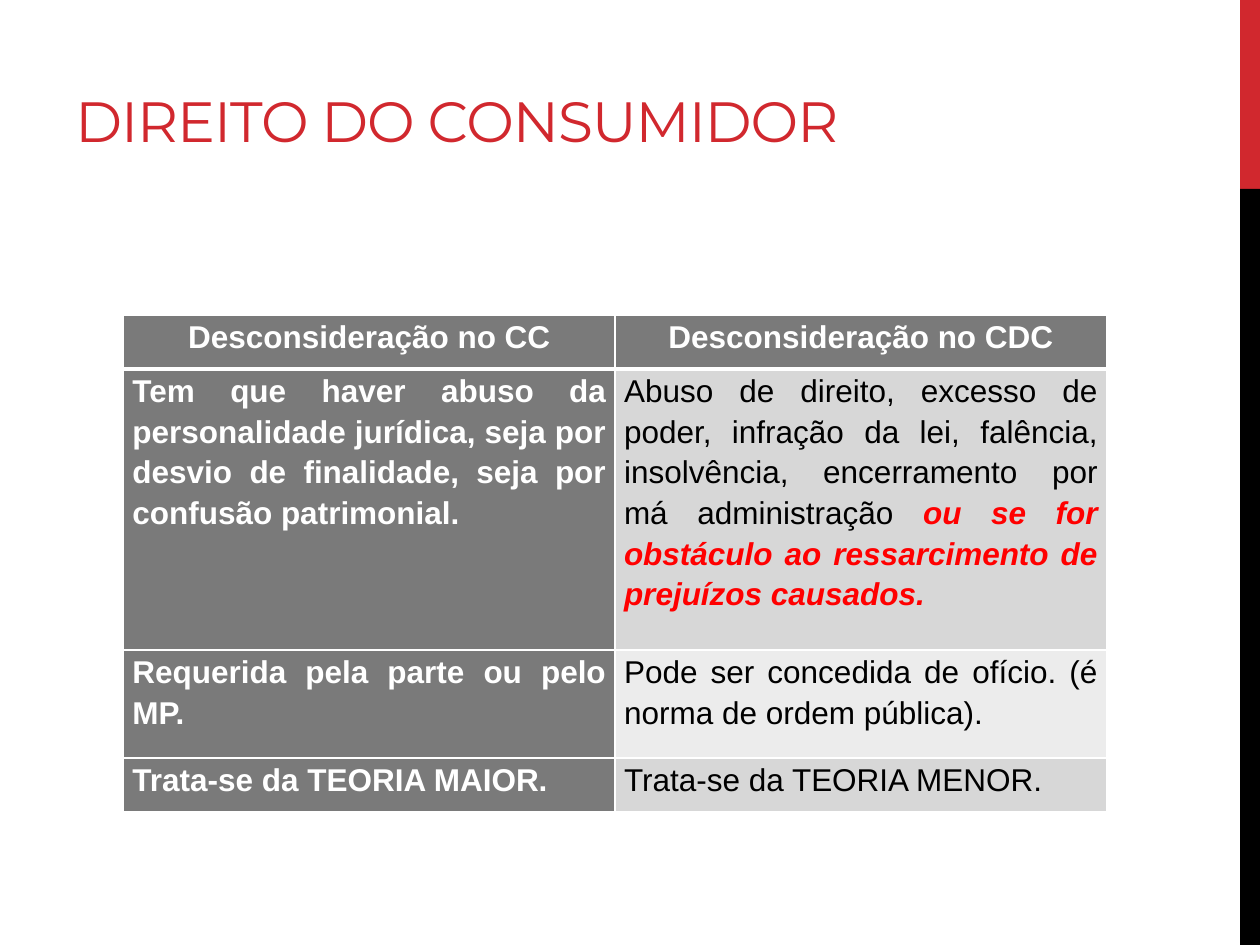
"""Build a slide comparing two regimes of piercing the corporate veil."""
from dataclasses import dataclass

from lxml import etree
from pptx import Presentation
from pptx.dml.color import RGBColor
from pptx.enum.shapes import MSO_SHAPE
from pptx.enum.text import MSO_ANCHOR, PP_ALIGN
from pptx.oxml.ns import qn
from pptx.slide import Slide
from pptx.table import _Cell
from pptx.text.text import _Paragraph
from pptx.util import Cm, Pt

RECTANGLE = MSO_SHAPE.RECTANGLE
BOTTOM = MSO_ANCHOR.BOTTOM
CENTER = PP_ALIGN.CENTER
JUSTIFY = PP_ALIGN.JUSTIFY

RED, BLACK, WHITE = "D1282E", "000000", "FFFFFF"
DARK, MEDIUM, LIGHT = "7A7A7A", "D7D7D7", "ECECEC"
HIGHLIGHT = "FF0000"

SLIDE_WIDTH, SLIDE_HEIGHT = 25.4, 19.05
BAR_LEFT, BAR_SPLIT = 25.0, 3.81
COLUMN_WIDTH = 9.91
ROW_HEIGHTS = (1.09, 5.66, 2.18, 1.09)
THIN, THICK = 1, 3


@dataclass(frozen=True)
class Span:
    """A stretch of text in one style."""

    text: str
    color: str = WHITE
    bold: bool = True
    italic: bool = False
    size: float = 18
    font: str = "Arial"


@dataclass(frozen=True)
class Entry:
    """The content of one table cell."""

    fill: str
    spans: tuple[Span, ...]


def heading(text: str) -> Entry:
    """Return a dark cell with bold white text."""
    return Entry(DARK, (Span(text),))


def body(fill: str, text: str, *extra: Span) -> Entry:
    """Return a pale cell that starts with plain black text."""
    return Entry(fill, (Span(text, BLACK, bold=False), *extra))


ROWS = (
    (heading("Desconsideração no CC"), heading("Desconsideração no CDC")),
    (
        heading(
            "Tem que haver abuso da personalidade jurídica, seja por desvio "
            "de finalidade, seja por confusão patrimonial."
        ),
        body(
            MEDIUM,
            "Abuso de direito, excesso de poder, infração da lei, falência, "
            "insolvência, encerramento por má administração ",
            Span(
                "ou se for obstáculo ao ressarcimento de prejuízos causados.",
                HIGHLIGHT,
                italic=True,
            ),
        ),
    ),
    (
        heading("Requerida pela parte ou pelo MP."),
        body(LIGHT, "Pode ser concedida de ofício. (é norma de ordem pública)."),
    ),
    (
        heading("Trata-se da TEORIA MAIOR."),
        body(MEDIUM, "Trata-se da TEORIA MENOR."),
    ),
)


def rgb(color: str) -> RGBColor:
    """Convert a hex string to a colour."""
    return RGBColor.from_string(color)


def add_span(paragraph: _Paragraph, span: Span, spacing: int = 0) -> None:
    """Append a styled run, with letter spacing in hundredths of a point."""
    run = paragraph.add_run()
    run.text = span.text
    run.font.name = span.font
    run.font.size = Pt(span.size)
    run.font.bold = span.bold
    run.font.italic = span.italic
    run.font.color.rgb = rgb(span.color)
    if spacing:
        run.font._element.set("spc", str(spacing))


def add_bar(slide: Slide, top: float, height: float, color: str) -> None:
    """Draw one part of the bar on the right edge."""
    bar = slide.shapes.add_shape(
        RECTANGLE, Cm(BAR_LEFT), Cm(top), Cm(SLIDE_WIDTH - BAR_LEFT), Cm(height)
    )
    bar.shadow.inherit = False
    bar.fill.solid()
    bar.fill.fore_color.rgb = rgb(color)
    bar.line.fill.background()


def add_title(slide: Slide, text: str) -> None:
    """Write the slide heading."""
    frame = slide.shapes.add_textbox(
        Cm(1.27), Cm(1.52), Cm(22.43), Cm(1.7)
    ).text_frame
    frame.word_wrap = True
    frame.vertical_anchor = BOTTOM
    title = Span(text, RED, bold=False, size=32.4, font="Montserrat")
    add_span(frame.paragraphs[0], title, spacing=-60)


def set_borders(cell: _Cell, top: float, bottom: float) -> None:
    """Give a cell white borders, with widths in points."""
    properties = cell._tc.get_or_add_tcPr()
    widths = {"a:lnL": THIN, "a:lnR": THIN, "a:lnT": top, "a:lnB": bottom}
    for position, (tag, width) in enumerate(widths.items()):
        line = etree.Element(qn(tag), w=str(Pt(width)))
        fill = etree.SubElement(line, qn("a:solidFill"))
        etree.SubElement(fill, qn("a:srgbClr"), val=WHITE)
        properties.insert(position, line)


def fill_cell(cell: _Cell, entry: Entry, row: int) -> None:
    """Write and style one cell."""
    cell.fill.solid()
    cell.fill.fore_color.rgb = rgb(entry.fill)
    cell.margin_left = cell.margin_right = Cm(0.18)
    cell.margin_top = cell.margin_bottom = Cm(0)
    paragraph = cell.text_frame.paragraphs[0]
    paragraph.alignment = CENTER if row == 0 else JUSTIFY
    paragraph.line_spacing = 1.15
    for span in entry.spans:
        add_span(paragraph, span)
    set_borders(
        cell,
        top=THICK if row == 1 else THIN,
        bottom=THICK if row == 0 else THIN,
    )


def add_comparison(slide: Slide) -> None:
    """Add the comparison table."""
    column_count = len(ROWS[0])
    table = slide.shapes.add_table(
        len(ROWS),
        column_count,
        Cm(2.49),
        Cm(6.35),
        Cm(COLUMN_WIDTH * column_count),
        Cm(sum(ROW_HEIGHTS)),
    ).table
    for column in table.columns:
        column.width = Cm(COLUMN_WIDTH)
    for row, (entries, height) in enumerate(zip(ROWS, ROW_HEIGHTS)):
        table.rows[row].height = Cm(height)
        for column, entry in enumerate(entries):
            fill_cell(table.cell(row, column), entry, row)


def main() -> None:
    """Build and save the presentation."""
    presentation = Presentation()
    presentation.slide_width = Cm(SLIDE_WIDTH)
    presentation.slide_height = Cm(SLIDE_HEIGHT)
    slide = presentation.slides.add_slide(presentation.slide_layouts[6])
    add_bar(slide, 0, BAR_SPLIT, RED)
    add_bar(slide, BAR_SPLIT, SLIDE_HEIGHT - BAR_SPLIT, BLACK)
    add_title(slide, "DIREITO DO CONSUMIDOR")
    add_comparison(slide)
    presentation.save("out.pptx")


if __name__ == "__main__":
    main()
